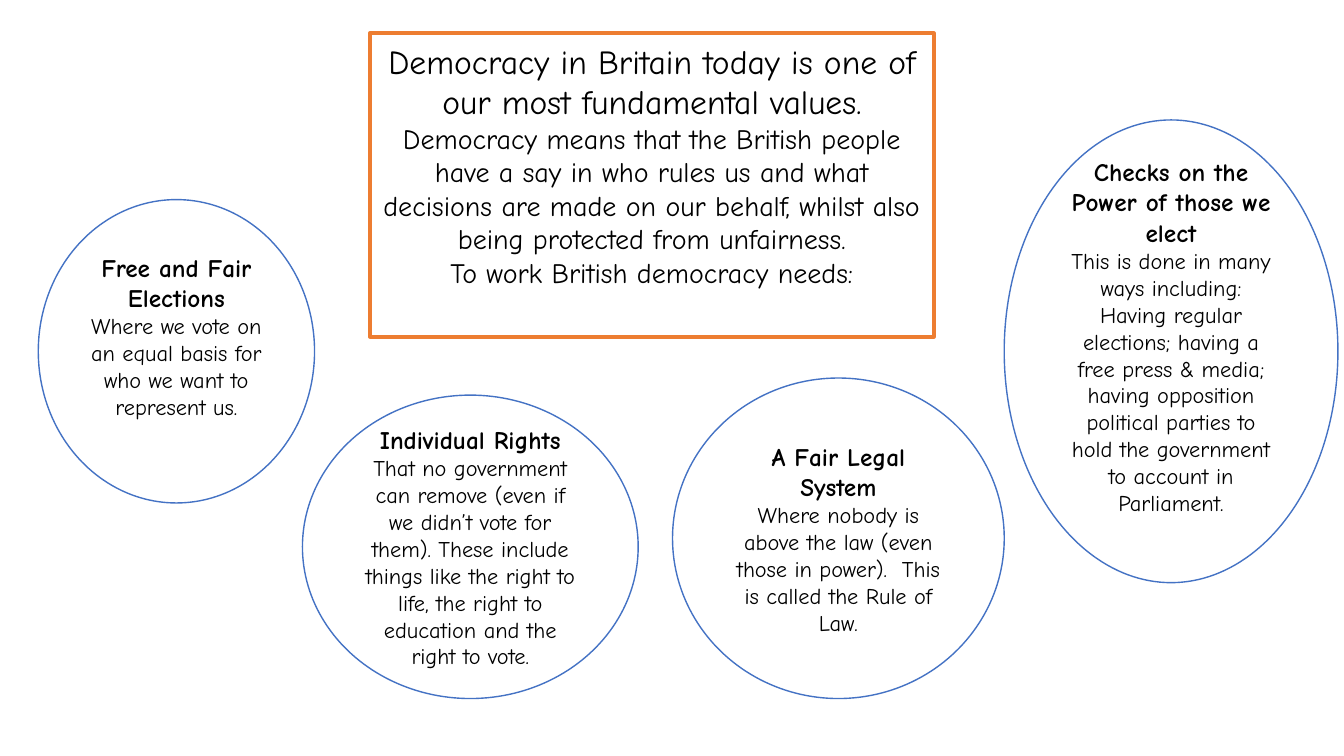
import pptx
import pptx.dml.color
import pptx.enum.shapes
import pptx.enum.text
import pptx.util

Inches = pptx.util.Inches
SHAPES = pptx.enum.shapes.MSO_SHAPE


def color(hex_string):
    return pptx.dml.color.RGBColor.from_string(hex_string)


def write(paragraph, text, size=16, bold=False, font="Comic Neue", ink="000000"):
    paragraph.alignment = pptx.enum.text.PP_ALIGN.CENTER
    run = paragraph.add_run()
    run.text = text
    run.font.name = font
    run.font.size = pptx.util.Pt(size)
    run.font.bold = bold
    run.font.color.rgb = color(ink)


class DemocracySlide:
    background = "FFFFFF"
    box_line = "ED7D31"
    circle_line = "4472C4"

    def __init__(self, slide):
        self.slide = slide

    def add_panel(self, kind, bounds, line, line_width, paragraphs, raise_by):
        shape = self.slide.shapes.add_shape(kind, *map(Inches, bounds))
        shape.shadow.inherit = False
        shape.fill.solid()
        shape.fill.fore_color.rgb = color(self.background)
        shape.line.color.rgb = color(line)
        shape.line.width = pptx.util.Pt(line_width)
        frame = shape.text_frame
        frame.word_wrap = True
        frame.vertical_anchor = pptx.enum.text.MSO_ANCHOR.MIDDLE
        frame.margin_bottom = Inches(0.05 + raise_by)
        for index, (text, style) in enumerate(paragraphs):
            paragraph = frame.add_paragraph() if index else frame.paragraphs[0]
            write(paragraph, text, **style)

    def add_box(self, bounds, headline, *details):
        paragraphs = [(headline, {"size": 24})]
        paragraphs += [(detail, {"size": 20}) for detail in details]
        self.add_panel(SHAPES.RECTANGLE, bounds, self.box_line, 3, paragraphs, 0.4)

    def add_circle(self, bounds, raise_by, title, *details):
        paragraphs = [(title, {"size": 18, "bold": True})]
        paragraphs += [(detail, {}) for detail in details]
        self.add_panel(SHAPES.OVAL, bounds, self.circle_line, 1, paragraphs, raise_by)


CIRCLES = [
    ((0.38, 1.98, 2.74, 3.01), 0.3, "Free and Fair Elections",
     "Where we vote on an equal basis for who we want to represent us."),
    ((3, 3.92, 3.33, 3.01), 0, "Individual Rights",
     "That no government can remove (even if we didn’t vote for them). "
     "These include things like the right to life, the right to education "
     "and the right to vote."),
    ((6.67, 3.75, 3.29, 3.18), 0, "A Fair Legal System",
     "Where nobody is above the law (even those in power).  "
     "This is called the Rule of Law."),
    ((9.96, 1.19, 3.31, 4.59), 0.3, "Checks on the Power of those we elect",
     "This is done in many ways including:",
     "Having regular elections; having a free press & media; having opposition "
     "political parties to hold the government to account in Parliament."),
]


def main():
    presentation = pptx.Presentation()
    presentation.slide_width = Inches(13.33)
    presentation.slide_height = Inches(7.5)
    slide = presentation.slides.add_slide(presentation.slide_layouts[6])
    democracy = DemocracySlide(slide)
    democracy.add_box(
        (3.67, 0.33, 5.59, 3.01),
        "Democracy in Britain today is one of our most fundamental values.",
        "Democracy means that the British people have a say in who rules us "
        "and what decisions are made on our behalf, whilst also being "
        "protected from unfairness.",
        "To work British democracy needs:",
    )
    for circle in CIRCLES:
        democracy.add_circle(*circle)
    presentation.save("out.pptx")


if __name__ == "__main__":
    main()
